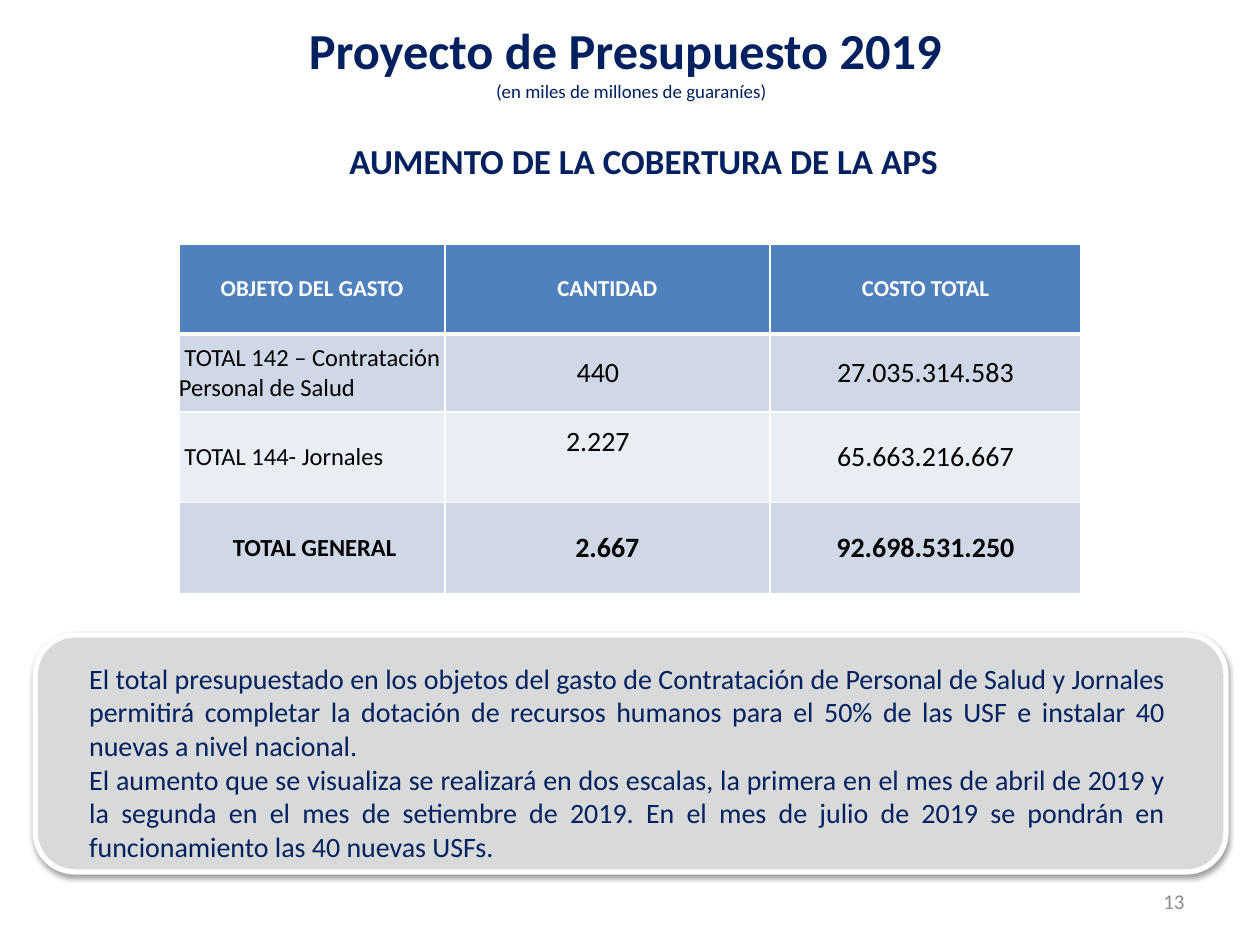
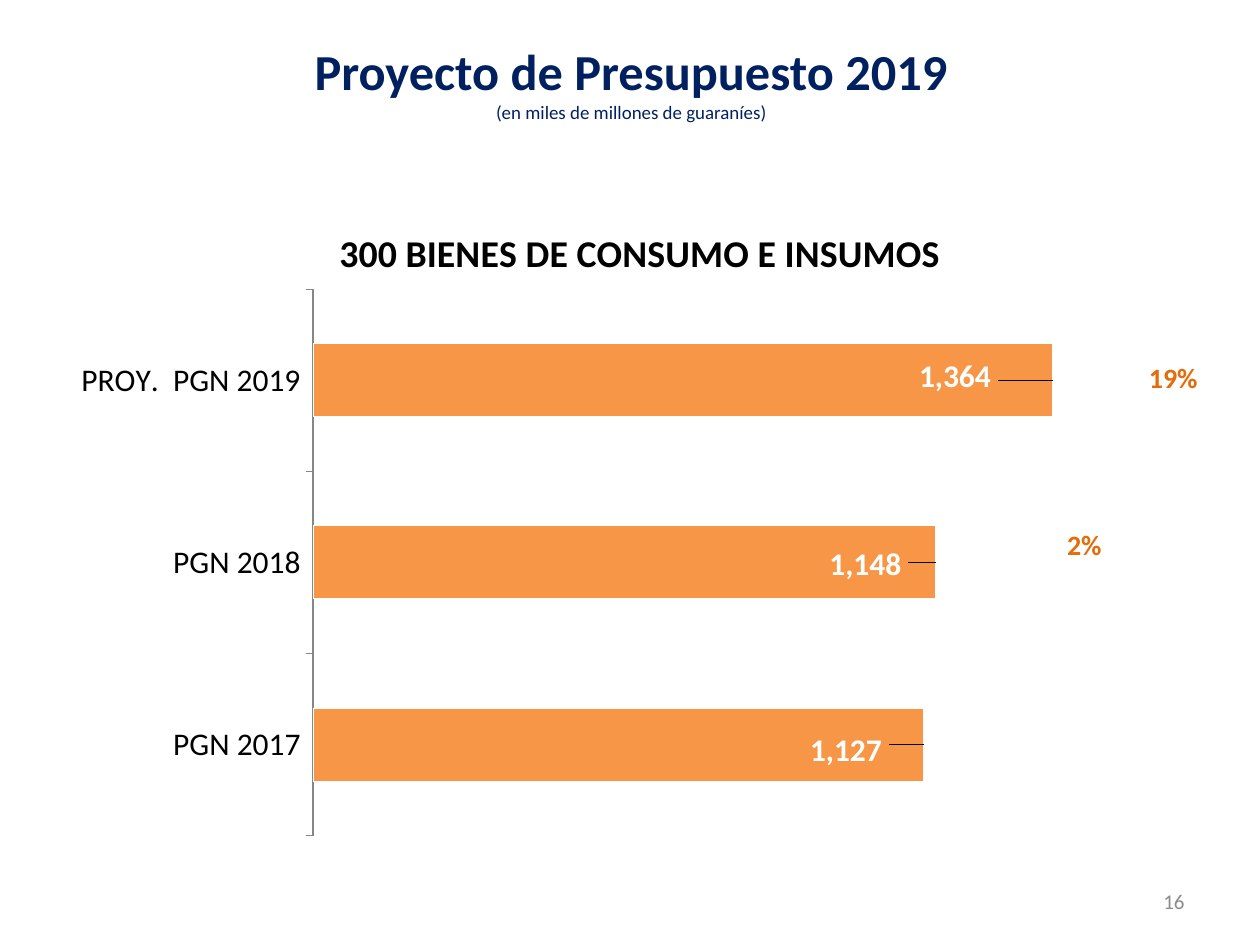
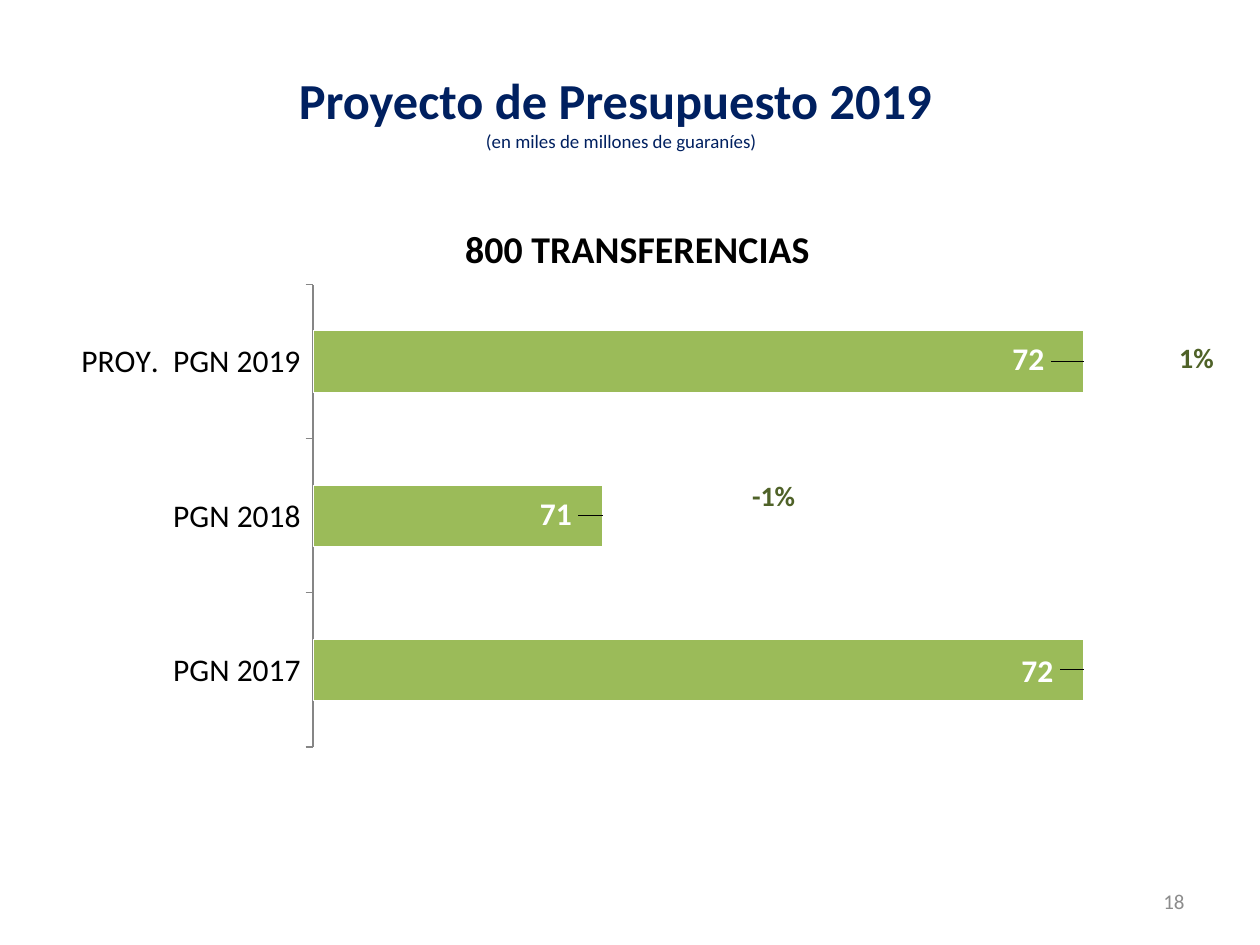
from lxml import etree
from pptx import Presentation
from pptx.chart.data import CategoryChartData
from pptx.dml.color import RGBColor
from pptx.enum import chart as ch, shapes, text
from pptx.oxml import ns, parse_xml
from pptx.util import Inches, Pt

NAVY = RGBColor(0x00, 0x20, 0x60)
WHITE = RGBColor(0xFF, 0xFF, 0xFF)
BLACK = RGBColor(0x00, 0x00, 0x00)
GRAY = RGBColor(0x8C, 0x8C, 0x8C)
AXIS = RGBColor(0x86, 0x86, 0x86)
PANEL = RGBColor(0xD9, 0xD9, 0xD9)
BLUE = RGBColor(0x4F, 0x81, 0xBD)
BAND = RGBColor(0xD0, 0xD8, 0xE8)
PALE = RGBColor(0xE9, 0xED, 0xF4)
ORANGE = RGBColor(0xF7, 0x96, 0x46)
RUST = RGBColor(0xE4, 0x6C, 0x0A)
GREEN = RGBColor(0x9B, 0xBB, 0x59)
OLIVE = RGBColor(0x4F, 0x62, 0x28)

FONT = "Calibri"
NUMBER = r"#,##0_ ;[Red]\-#,##0\ "
LEFT, MID, RIGHT = text.PP_ALIGN.LEFT, text.PP_ALIGN.CENTER, text.PP_ALIGN.RIGHT
CENTER = text.MSO_ANCHOR.MIDDLE
YEARS = ["PGN 2017", "PGN 2018", "PROY.  PGN 2019"]


def style(font, size, color, bold=False):
    font.name, font.size, font.bold = FONT, Pt(size), bold
    font.color.rgb = color


def write(par, words, size, color, bold=False):
    run = par.add_run()
    run.text = words
    style(run.font, size, color, bold)


def add_box(slide, box, align=LEFT, anchor=text.MSO_ANCHOR.TOP):
    """Add an empty wrapping text box and return its frame."""
    frame = slide.shapes.add_textbox(*map(Inches, box)).text_frame
    frame.word_wrap = True
    frame.vertical_anchor = anchor
    frame.paragraphs[0].alignment = align
    return frame


def add_label(slide, box, words, size, color, bold=False, **place):
    write(add_box(slide, box, **place).paragraphs[0], words, size, color, bold)


def add_head(slide, left, top, title):
    par = add_box(slide, (left, top, 9, 0.71), MID, CENTER).paragraphs[0]
    write(par, title, 28.8, NAVY, True)
    par.add_line_break()
    write(par, "(en miles de millones de guaraníes)", 10.8, NAVY)


def add_number(slide, number):
    add_label(slide, (7.17, 6.95, 2.33, 0.4), number, 12, GRAY,
              align=RIGHT, anchor=CENTER)


def add_shadow(shape):
    a = ns.nsdecls("a")
    shape._element.spPr.append(parse_xml(
        f'<a:effectLst {a}><a:outerShdw blurRad="{Inches(0.04)}" '
        f'dist="{Inches(0.02)}" dir="5400000" rotWithShape="0">'
        '<a:srgbClr val="000000"><a:alpha val="38000"/></a:srgbClr>'
        '</a:outerShdw></a:effectLst>'))


def add_panel(slide, box):
    panel = slide.shapes.add_shape(
        shapes.MSO_SHAPE.ROUNDED_RECTANGLE, *map(Inches, box))
    panel.shadow.inherit = False
    panel._element.spPr.remove(panel._element.spPr.find(ns.qn("a:effectLst")))
    panel.fill.solid()
    panel.fill.fore_color.rgb = PANEL
    panel.line.color.rgb = WHITE
    panel.line.width = Pt(3)
    add_shadow(panel)


def add_note(slide, box, lines):
    """Add the gray panel with justified paragraphs in it."""
    left, top, width, height = box
    add_panel(slide, box)
    frame = add_box(slide, (left + 0.33, top + 0.16, width - 0.71, height - 0.16))
    for i, line in enumerate(lines):
        par = frame.add_paragraph() if i else frame.paragraphs[0]
        par.alignment = text.PP_ALIGN.JUSTIFY
        write(par, line, 16, NAVY)


def edge_cell(cell, bottom):
    props = cell._tc.get_or_add_tcPr()
    sides = zip(("lnL", "lnR", "lnT", "lnB"), (1, 1, 1, bottom))
    for i, (side, width) in enumerate(sides):
        props.insert(i, parse_xml(
            f'<a:{side} {ns.nsdecls("a")} w="{Pt(width)}"><a:solidFill>'
            f'<a:srgbClr val="{WHITE}"/></a:solidFill></a:{side}>'))


def add_costs(slide, left, top):
    rows = [
        (0.71, [" OBJETO DEL GASTO ", " CANTIDAD ", "COSTO TOTAL"], BLUE),
        (0.62, [" TOTAL 142 – Contratación Personal de Salud", "440",
                "27.035.314.583"], BAND),
        (0.72, [" TOTAL 144- Jornales", "2.227", "65.663.216.667"], PALE),
        (0.72, [" TOTAL GENERAL", "2.667", "92.698.531.250"], BAND),
    ]
    widths = [2.11, 2.58, 2.47]
    grid = slide.shapes.add_table(
        len(rows), len(widths), Inches(left), Inches(top), Inches(sum(widths)),
        Inches(sum(row[0] for row in rows))).table
    for col, width in zip(grid.columns, widths):
        col.width = Inches(width)
    for r, (height, words, fill) in enumerate(rows):
        grid.rows[r].height = Inches(height)
        head, ends = r == 0, r in (0, len(rows) - 1)
        for c, word in enumerate(words):
            cell = grid.cell(r, c)
            cell.margin_left = cell.margin_right = 0
            cell.margin_top = cell.margin_bottom = 0
            cell.vertical_anchor = CENTER
            cell.fill.solid()
            cell.fill.fore_color.rgb = fill
            edge_cell(cell, 3 if head else 1)
            par = cell.text_frame.paragraphs[0]
            par.alignment = MID if c or ends else LEFT
            size = 13 if head else 16 if c else 14
            write(par, word, size, WHITE if head else BLACK, ends)
    for r in (1, 2):
        grid.cell(r, 1).margin_right = Inches(0.15)
    grid.cell(2, 1).margin_bottom = Inches(0.25)


def set_layout(node, index, inner=False, **sizes):
    """Place a chart part by shares of the chart's width and height."""
    for old in node.findall(ns.qn("c:layout")):
        node.remove(old)
    layout = parse_xml(f'<c:layout {ns.nsdecls("c")}><c:manualLayout/></c:layout>')
    values = {"layoutTarget": "inner"} if inner else {}
    if inner or node.tag == ns.qn("c:title"):
        values.update(xMode="edge", yMode="edge")
    for key, value in {**values, **sizes}.items():
        etree.SubElement(layout[0], ns.qn(f"c:{key}")).set("val", str(value))
    node.insert(index, layout)


def add_bars(slide, box, title, values, color, scale, start, plot, shifts):
    """Add the bar chart; shifts move each value label from the bar's end."""
    data = CategoryChartData(number_format=NUMBER)
    data.categories = YEARS
    data.add_series(title, values)
    chart = slide.shapes.add_chart(
        ch.XL_CHART_TYPE.BAR_CLUSTERED, *map(Inches, box), data).chart
    style(chart.font, 18, BLACK)
    chart.has_legend = False
    chart.has_title = True
    write(chart.chart_title.text_frame.paragraphs[0], title, 21.6, BLACK, True)
    set_layout(chart.chart_title._element, 1, x=start, y=0.05)

    years, axis = chart.category_axis, chart.value_axis
    years.major_tick_mark = ch.XL_TICK_MARK.OUTSIDE
    years.format.line.color.rgb = AXIS
    years.format.line.width = Pt(0.75)
    axis.minimum_scale, axis.maximum_scale = scale
    axis.has_major_gridlines = False
    axis.visible = False

    bars = chart.plots[0]
    bars.gap_width = 150
    bars.vary_by_categories = False
    series = bars.series[0]
    series.format.fill.solid()
    series.format.fill.fore_color.rgb = color
    series.format.line.color.rgb = WHITE
    labels = series.data_labels
    labels.show_value = True
    labels.number_format, labels.number_format_is_linked = NUMBER, False
    style(labels.font, 18, WHITE, True)
    for i in range(len(values)):
        label = series.points[i].data_label
        style(label.font, 18, WHITE, True)
        label.position = ch.XL_LABEL_POSITION.INSIDE_END
    for node, (x, y) in zip(chart.element.iter(ns.qn("c:dLbl")), shifts):
        set_layout(node, 1, x=x, y=y)
    x, y, w, h = plot
    area = next(chart.element.iter(ns.qn("c:plotArea")))
    set_layout(area, 0, inner=True, x=x, y=y, w=w, h=h)


def add_change(slide, left, top, words, color):
    add_label(slide, (left, top, 0.65, 0.41), words, 16, color, True)


def fill_staff(slide):
    add_note(slide, (0.28, 5.04, 9.45, 1.88), [
        "El total presupuestado en los objetos del gasto de Contratación de "
        "Personal de Salud y Jornales permitirá completar la dotación de "
        "recursos humanos para el 50% de las USF e instalar 40 nuevas a nivel "
        "nacional.",
        "El aumento que se visualiza se realizará en dos escalas, la primera "
        "en el mes de abril de 2019 y la segunda en el mes de setiembre de "
        "2019. En el mes de julio de 2019 se pondrán en funcionamiento las 40 "
        "nuevas USFs."])
    add_head(slide, 0.51, 0.13, "Proyecto de Presupuesto 2019 ")
    add_label(slide, (0.61, 0.92, 9, 0.71), "AUMENTO DE LA COBERTURA DE LA APS",
              20, NAVY, True, align=MID, anchor=CENTER)
    add_costs(slide, 1.42, 1.94)
    add_number(slide, "13")


def fill_goods(slide):
    add_head(slide, 0.51, 0.29, "Proyecto de Presupuesto 2019")
    add_bars(slide, (0.46, 1.48, 9.08, 5.26), "300 BIENES DE CONSUMO E INSUMOS",
             [1127, 1148, 1364], ORANGE, (0, 1600), 0.24,
             (0.223, 0.155, 0.758, 0.825),
             [(-0.026, 0.008), (-0.019, 0.003), (-0.043, -0.006)])
    add_change(slide, 9.02, 2.81, "19%", RUST)
    add_change(slide, 8.37, 4.14, "2%", RUST)
    add_number(slide, "16")


def fill_grants(slide):
    add_head(slide, 0.43, 0.52, "Proyecto de Presupuesto 2019 ")
    add_bars(slide, (0.46, 1.48, 9.08, 4.54), "800 TRANSFERENCIAS",
             [72, 71, 72], GREEN, (70.4, 72.2), 0.35,
             (0.223, 0.172, 0.758, 0.808),
             [(-0.016, 0.002), (-0.016, -0.002), (-0.024, -0.005)])
    add_change(slide, 9.26, 2.65, "1%", OLIVE)
    add_change(slide, 5.87, 3.75, "-1%", OLIVE)
    add_number(slide, "18")


def main():
    deck = Presentation()
    deck.slide_width, deck.slide_height = Inches(10), Inches(7.5)
    for fill in (fill_staff, fill_goods, fill_grants):
        fill(deck.slides.add_slide(deck.slide_layouts[6]))
    deck.save("out.pptx")


if __name__ == "__main__":
    main()
